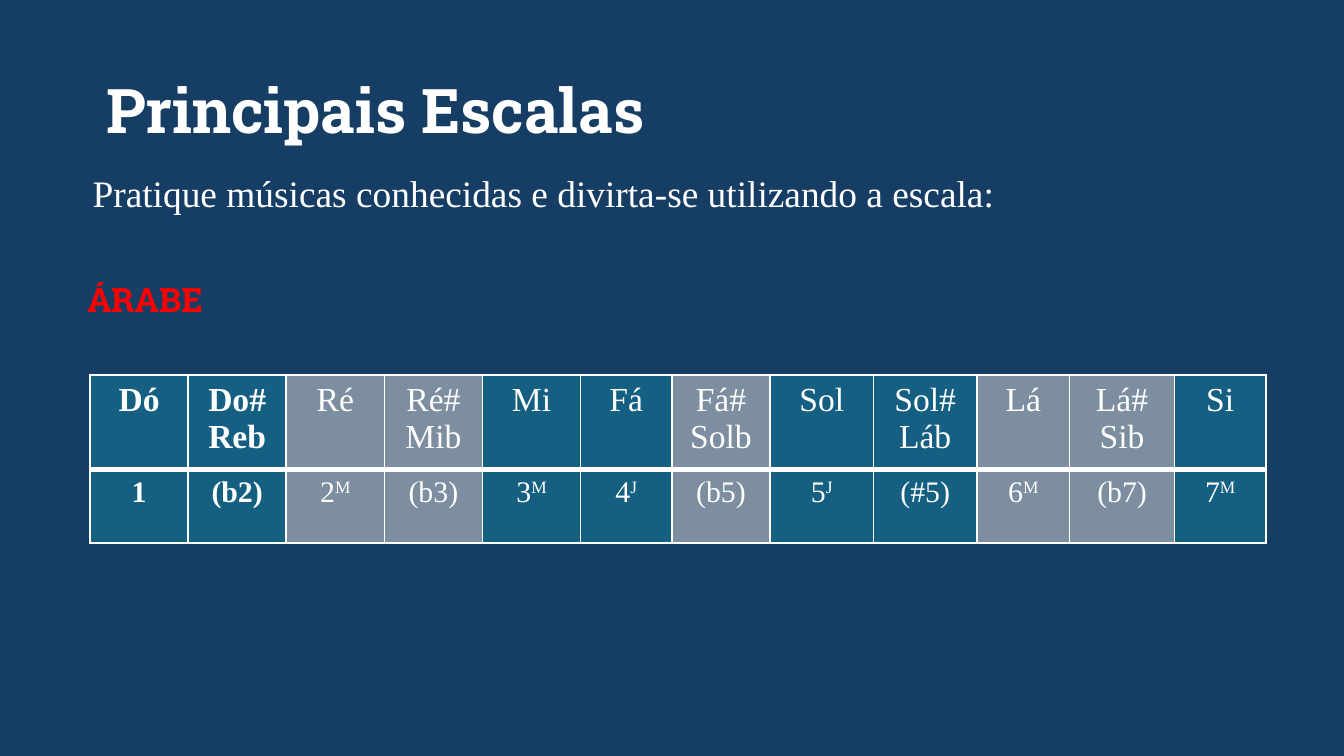
from lxml.etree import SubElement
from pptx import Presentation
from pptx.dml.color import RGBColor
from pptx.enum.text import MSO_ANCHOR, PP_ALIGN
from pptx.oxml import parse_xml
from pptx.oxml.ns import nsdecls, qn
from pptx.util import Inches, Pt

NAVY = RGBColor(0x16, 0x3E, 0x64)
TEAL = RGBColor(0x15, 0x60, 0x82)
GRAY = RGBColor(0xD1, 0xD1, 0xD1)
WHITE = RGBColor(0xFF, 0xFF, 0xFF)
RED = RGBColor(0xFF, 0x00, 0x00)
SERIF = "Times New Roman"
SLAB = "Roboto Slab"

SLIDE_WIDTH = 10
SLIDE_HEIGHT = SLIDE_WIDTH * 9 / 16
COLUMN_WIDTHS = [0.73] * 5 + [0.68, 0.73, 0.77, 0.77, 0.69, 0.78, 0.68]
ROW_HEIGHTS = [0.51, 0.55]
ROW_SIZES = [18, 16]
ROW_OPACITIES = [100, 98]
ROW_BOTTOM_LINES = [3, 1]
GRAY_OPACITY = 55
BOLD_COLUMNS = 2
DEGREES = [
    ("Dó", "1", "", True),
    ("Do#\nReb", "(b2)", "", True),
    ("Ré", "2", "M", False),
    ("Ré#\nMib", "(b3)", "", False),
    ("Mi", "3", "M", True),
    ("Fá", "4", "J", True),
    ("Fá#\nSolb", "(b5)", "", False),
    ("Sol", "5", "J", True),
    ("Sol#\nLáb", "(#5)", "", True),
    ("Lá", "6", "M", False),
    ("Lá#\nSib", "(b7)", "", False),
    ("Si", "7", "M", True),
]


def write_text(frame, text, superscript="", *, size, font=SERIF, color=WHITE,
               bold=False, align=PP_ALIGN.LEFT, spacing=None):
    """Write one paragraph per line, with an optional superscript at the end."""
    for index, line in enumerate(text.split("\n")):
        paragraph = frame.paragraphs[0] if index == 0 else frame.add_paragraph()
        paragraph.alignment = align
        paragraph.line_spacing = spacing
        for part in filter(None, (line, superscript)):
            run = paragraph.add_run()
            run.text = part
            run.font.size = Pt(size)
            run.font.name = font
            run.font.bold = bold
            run.font.color.rgb = color
            if part == superscript:
                run.font._element.set("baseline", "30000")


def place_title(slide, text, left, top, width, height):
    """Move and format the title placeholder."""
    title = slide.shapes.title
    title.left, title.top = Inches(left), Inches(top)
    title.width, title.height = Inches(width), Inches(height)
    title.text_frame.vertical_anchor = MSO_ANCHOR.MIDDLE
    write_text(title.text_frame, text, size=33, font=SLAB, bold=True, spacing=0.9)


def add_text(slide, text, left, top, width, height, **style):
    """Add a wrapping text box."""
    box = slide.shapes.add_textbox(Inches(left), Inches(top), Inches(width), Inches(height))
    box.text_frame.word_wrap = True
    write_text(box.text_frame, text, **style)


def style_cell(cell, color, opacity, bottom_line):
    """Give a cell its fill, opacity and white borders."""
    cell.fill.solid()
    cell.fill.fore_color.rgb = color
    properties = cell._tc.get_or_add_tcPr()
    if opacity < 100:
        fill_color = properties.find(".//" + qn("a:srgbClr"))
        SubElement(fill_color, qn("a:alpha")).set("val", str(opacity * 1000))
    borders = {"lnL": 1, "lnR": 1, "lnT": 1, "lnB": bottom_line}
    for index, (side, points) in enumerate(borders.items()):
        properties.insert(index, parse_xml(
            f'<a:{side} {nsdecls("a")} w="{Pt(points)}"><a:solidFill>'
            f'<a:srgbClr val="{WHITE}"/></a:solidFill></a:{side}>'))


def add_scale_table(slide, left, top, width, height):
    """Add the chromatic table, with the notes of the scale in teal."""
    frame = slide.shapes.add_table(
        len(ROW_HEIGHTS), len(DEGREES), Inches(left), Inches(top),
        Inches(width), Inches(height))
    table = frame.table
    table.first_row = table.horz_banding = False
    for row, row_height in zip(table.rows, ROW_HEIGHTS):
        row.height = Inches(row_height)
    for column, column_width in zip(table.columns, COLUMN_WIDTHS):
        column.width = Inches(column_width)
    frame.width, frame.height = Inches(width), Inches(height)
    for column, (note, degree, quality, in_scale) in enumerate(DEGREES):
        for row, content in enumerate([(note,), (degree, quality)]):
            cell = table.cell(row, column)
            write_text(cell.text_frame, *content, size=ROW_SIZES[row],
                       bold=column < BOLD_COLUMNS, align=PP_ALIGN.CENTER)
            opacity = ROW_OPACITIES[row] if in_scale else GRAY_OPACITY
            style_cell(cell, TEAL if in_scale else GRAY, opacity, ROW_BOTTOM_LINES[row])


def build_scale_slide(presentation):
    """Build the slide of the Arabic scale."""
    slide = presentation.slides.add_slide(presentation.slide_layouts[5])
    slide.background.fill.solid()
    slide.background.fill.fore_color.rgb = NAVY
    place_title(slide, "Principais Escalas", 0.69, 0.3, 8.62, 1.09)
    add_text(slide, "Pratique músicas conhecidas e divirta-se utilizando a escala:",
             0.59, 1.22, 9.01, 2.89, size=20)
    add_scale_table(slide, 0.67, 2.79, 8.74, 1.33)
    add_text(slide, "ÁRABE", 0.55, 2.03, 3.64, 0.4, size=18, font=SLAB, color=RED, bold=True)


def main():
    """Create and save the presentation."""
    presentation = Presentation()
    presentation.slide_width = Inches(SLIDE_WIDTH)
    presentation.slide_height = Inches(SLIDE_HEIGHT)
    build_scale_slide(presentation)
    presentation.save("out.pptx")


if __name__ == "__main__":
    main()
